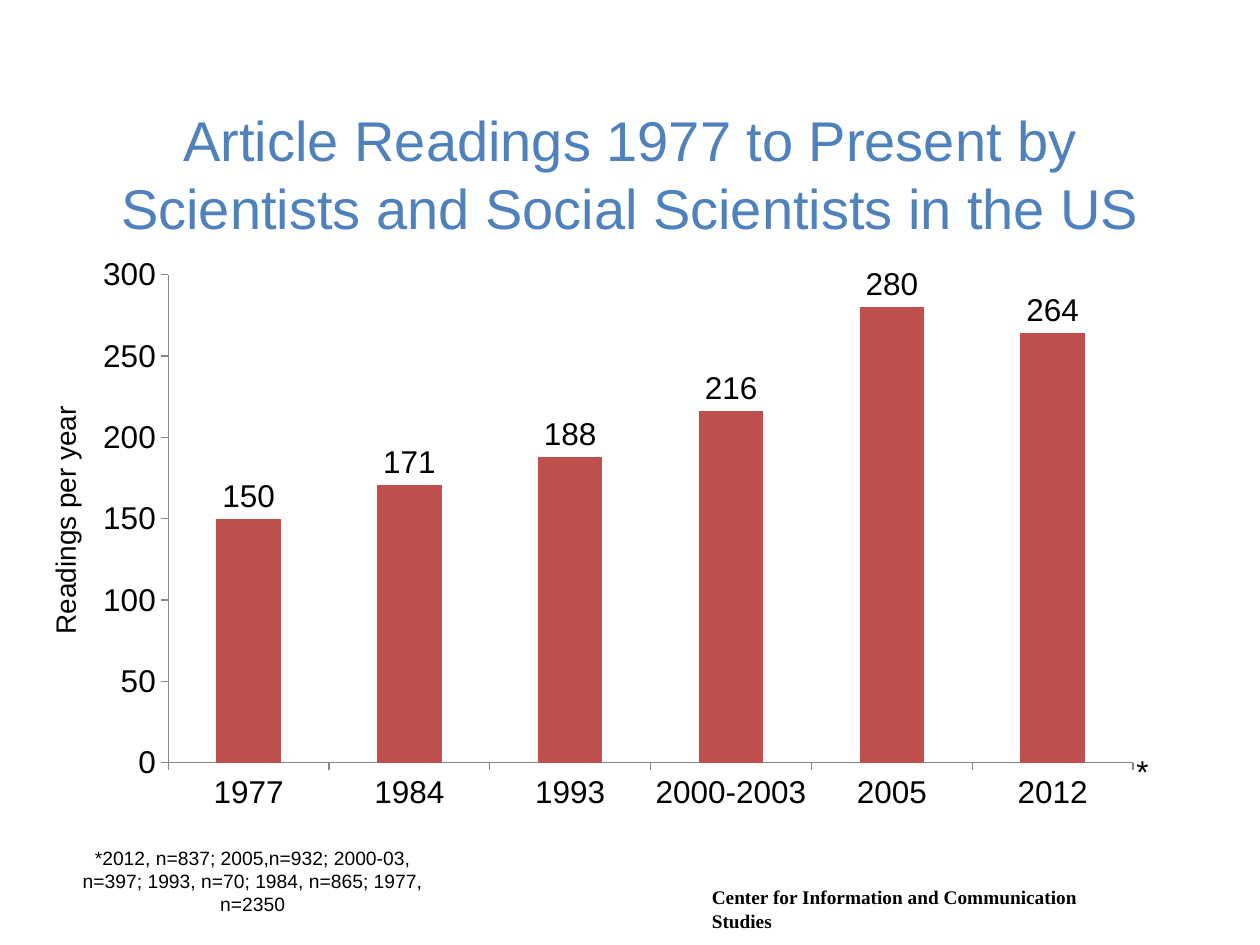
from dataclasses import dataclass

from lxml import etree
from pptx import Presentation
from pptx.chart.data import CategoryChartData
from pptx.dml.color import RGBColor
from pptx.enum.chart import XL_CHART_TYPE, XL_LABEL_POSITION, XL_TICK_MARK
from pptx.enum.text import MSO_ANCHOR, MSO_AUTO_SIZE, PP_ALIGN
from pptx.oxml.ns import qn
from pptx.util import Cm, Pt

COLUMNS = XL_CHART_TYPE.COLUMN_CLUSTERED
OUTSIDE_END = XL_LABEL_POSITION.OUTSIDE_END
TICK_OUT, TICK_NONE = XL_TICK_MARK.OUTSIDE, XL_TICK_MARK.NONE
LEFT, CENTER = PP_ALIGN.LEFT, PP_ALIGN.CENTER
MIDDLE = MSO_ANCHOR.MIDDLE
NO_AUTOFIT = MSO_AUTO_SIZE.NONE

BLUE = RGBColor(0x4F, 0x81, 0xBD)
RED = RGBColor(0xC0, 0x50, 0x4D)
BLACK = RGBColor(0, 0, 0)
GRAY = RGBColor(0x87, 0x87, 0x87)

READINGS = {"1977": 150, "1984": 171, "1993": 188,
            "2000-2003": 216, "2005": 280, "2012": 264}
# Inner plot area as fractions of the chart frame
PLOT_AREA = {"x": 0.069, "y": 0.04, "w": 0.901, "h": 0.861}


@dataclass
class Label:
    text: str
    left: float
    top: float
    width: float
    height: float
    size: int
    font: str = "Arial"
    bold: bool = False
    align: PP_ALIGN = LEFT
    wrap: bool = True
    vertical: bool = False


LABELS = [
    Label("Center for Information and Communication Studies",
          14.1, 17.73, 9.14, 0.71, 11, font="Times New Roman", bold=True),
    Label("*", 22.66, 15.04, 0.76, 1.02, 18, wrap=False),
    Label("*2012, n=837; 2005,n=932; 2000-03, n=397; 1993, n=70; "
          "1984, n=865; 1977, n=2350",
          1.07, 16.94, 8.05, 1.68, 11, align=CENTER),
    Label("Readings per year", 0.84, 5.51, 1.19, 9.96, 16,
          align=CENTER, vertical=True),
]


def write_text(frame, text: str, *, size: int, font: str = "Arial",
               color: RGBColor = BLACK, bold: bool = False,
               align: PP_ALIGN = LEFT) -> None:
    para = frame.paragraphs[0]
    para.alignment = align
    span = para.add_run()
    span.text = text
    span.font.size, span.font.name = Pt(size), font
    span.font.bold = bold
    span.font.color.rgb = color


def add_label(page, label: Label) -> None:
    box = page.shapes.add_textbox(Cm(label.left), Cm(label.top),
                                  Cm(label.width), Cm(label.height))
    frame = box.text_frame
    frame.word_wrap = label.wrap
    if label.vertical:
        frame._txBody.bodyPr.set("vert", "vert270")
    write_text(frame, label.text, size=label.size, font=label.font,
               bold=label.bold, align=label.align)


def add_title(page, text: str) -> None:
    title = page.shapes.title
    title.left, title.top = Cm(1.07), Cm(1.9)
    title.width, title.height = Cm(23.29), Cm(3.18)
    frame = title.text_frame
    frame.word_wrap = True
    frame.auto_size = NO_AUTOFIT
    frame.vertical_anchor = MIDDLE
    write_text(frame, text, size=32, color=BLUE, align=CENTER)


def fix_plot_area(chart) -> None:
    plot_area = chart._chartSpace.chart.plotArea
    for old in plot_area.findall(qn("c:layout")):
        plot_area.remove(old)
    layout = etree.Element(qn("c:layout"))
    manual = etree.SubElement(layout, qn("c:manualLayout"))
    settings = {"layoutTarget": "inner", "xMode": "edge", "yMode": "edge",
                **PLOT_AREA}
    for name, value in settings.items():
        etree.SubElement(manual, qn(f"c:{name}")).set("val", str(value))
    plot_area.insert(0, layout)


def add_readings_chart(page) -> None:
    data = CategoryChartData()
    data.categories = list(READINGS)
    data.add_series("Series 1", list(READINGS.values()))
    chart = page.shapes.add_chart(COLUMNS, Cm(1.9), Cm(5.08),
                                  Cm(21.59), Cm(11.43), data).chart
    chart.has_title = chart.has_legend = False
    chart.font.size, chart.font.name = Pt(18), "Arial"
    chart.font.color.rgb = BLACK

    # Axes
    for axis in (chart.category_axis, chart.value_axis):
        axis.has_major_gridlines = False
        axis.major_tick_mark = TICK_OUT
        axis.minor_tick_mark = TICK_NONE
        axis.format.line.color.rgb = GRAY
        axis.format.line.width = Pt(0.75)
    chart.value_axis.minimum_scale = 0
    chart.value_axis.maximum_scale = 300
    chart.value_axis.major_unit = 50

    # Columns and their values
    plot = chart.plots[0]
    plot.vary_by_categories = False
    plot.gap_width = 150
    fill = plot.series[0].format.fill
    fill.solid()
    fill.fore_color.rgb = RED
    plot.has_data_labels = True
    plot.data_labels.show_value = True
    plot.data_labels.position = OUTSIDE_END
    fix_plot_area(chart)


def main() -> None:
    deck = Presentation()
    deck.slide_width, deck.slide_height = Cm(25.4), Cm(19.05)
    page = deck.slides.add_slide(deck.slide_layouts[5])
    add_title(page, "Article Readings 1977 to Present by "
                    "Scientists and Social Scientists in the US")
    add_readings_chart(page)
    for label in LABELS:
        add_label(page, label)
    deck.save("out.pptx")


if __name__ == "__main__":
    main()
